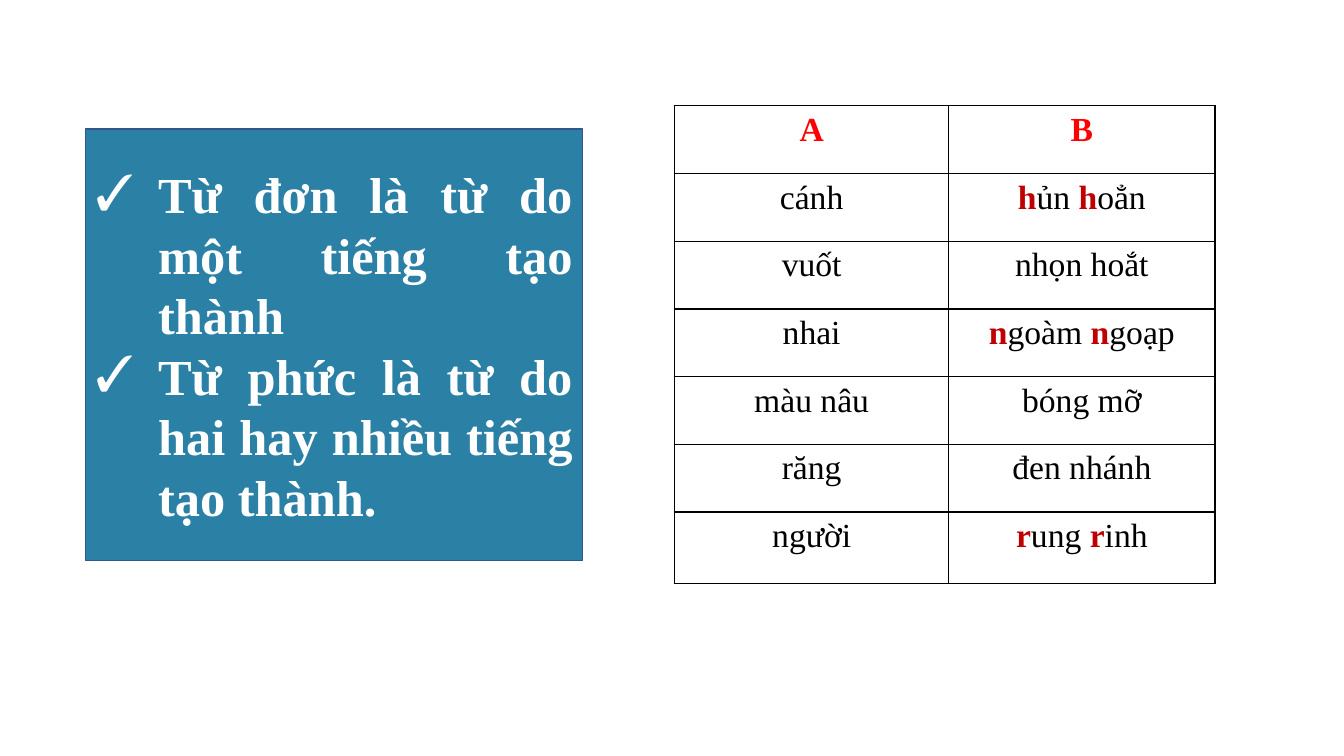
import pptx
import pptx.util
import pptx.dml.color
import pptx.enum.shapes
import pptx.enum.text
import pptx.oxml
import pptx.oxml.ns
from lxml import etree

Inches = pptx.util.Inches
Align = pptx.enum.text.PP_ALIGN
Anchor = pptx.enum.text.MSO_ANCHOR

WHITE = pptx.dml.color.RGBColor(0xFF, 0xFF, 0xFF)
BLACK = pptx.dml.color.RGBColor(0x00, 0x00, 0x00)
RED = pptx.dml.color.RGBColor(0xFF, 0x00, 0x00)
DARK_RED = pptx.dml.color.RGBColor(0xC0, 0x00, 0x00)
TEAL = pptx.dml.color.RGBColor(0x2B, 0x80, 0xA5)
NAVY = pptx.dml.color.RGBColor(0x32, 0x54, 0x91)
FONT = "Times New Roman"

RULES = [
    "Từ đơn là từ do một tiếng tạo thành",
    "Từ phức là từ do hai hay nhiều tiếng tạo thành.",
]
WORD_PAIRS = [
    ("A", "B"),
    ("cánh", "*h*ủn *h*oẳn"),
    ("vuốt", "nhọn hoắt"),
    ("nhai", "*n*goàm *n*goạp"),
    ("màu nâu", "bóng mỡ"),
    ("răng", "đen nhánh"),
    ("người", "*r*ung *r*inh"),
]
COLUMN_WIDTHS = [2.72, 2.64]
TABLE_HEIGHT = 4.74
LAST_ROW = 0.71
ROW_HEIGHTS = [(TABLE_HEIGHT - LAST_ROW) / 6] * 6 + [LAST_ROW]


def write(para, text, size, color, bold=False, accent=DARK_RED, align=Align.CENTER):
    para.alignment = align
    for index, piece in enumerate(text.split("*")):
        if piece:
            marked = index % 2 == 1
            span = para.add_run()
            span.text = piece
            span.font.name = FONT
            span.font.size = pptx.util.Pt(size)
            span.font.bold = bold or marked
            span.font.color.rgb = accent if marked else color


deck = pptx.Presentation()
deck.slide_width = Inches(13.33)
deck.slide_height = Inches(7.5)
page = deck.slides.add_slide(deck.slide_layouts[6])

box = page.shapes.add_shape(
    pptx.enum.shapes.MSO_SHAPE.RECTANGLE,
    Inches(0.85), Inches(1.28), Inches(4.93), Inches(4.28))
box.shadow.inherit = False
box.fill.solid()
box.fill.fore_color.rgb = TEAL
box.line.color.rgb = NAVY
box.line.width = pptx.util.Pt(1)
frame = box.text_frame
frame.word_wrap = True
frame.vertical_anchor = Anchor.MIDDLE
for index, rule in enumerate(RULES):
    para = frame.add_paragraph() if index else frame.paragraphs[0]
    write(para, rule, size=36, color=WHITE, bold=True, align=Align.JUSTIFY)
    properties = para._p.get_or_add_pPr()
    properties.set("marL", str(Inches(0.62)))
    properties.set("indent", str(-Inches(0.62)))
    bullet_font = etree.SubElement(properties, pptx.oxml.ns.qn("a:buFont"))
    bullet_font.set("typeface", FONT)
    bullet = etree.SubElement(properties, pptx.oxml.ns.qn("a:buChar"))
    bullet.set("char", "✓")

table = page.shapes.add_table(
    len(WORD_PAIRS), len(COLUMN_WIDTHS), Inches(6.69), Inches(1.05),
    Inches(sum(COLUMN_WIDTHS)), Inches(TABLE_HEIGHT)).table
table.first_row = False
table.horz_banding = False
for column, width in zip(table.columns, COLUMN_WIDTHS):
    column.width = Inches(width)
for row, height in zip(table.rows, ROW_HEIGHTS):
    row.height = Inches(height)

for row_index, pair in enumerate(WORD_PAIRS):
    header = row_index == 0
    for column_index, word in enumerate(pair):
        cell = table.cell(row_index, column_index)
        cell.margin_left = cell.margin_right = Inches(0.07)
        cell.margin_top = cell.margin_bottom = 0
        cell.vertical_anchor = Anchor.TOP
        para = cell.text_frame.paragraphs[0]
        para.line_spacing = 1.15
        write(para, word, size=24, color=RED if header else BLACK, bold=header)
        properties = cell._tc.get_or_add_tcPr()
        for side in ("lnL", "lnR", "lnT", "lnB"):
            properties.append(pptx.oxml.parse_xml(
                f'<a:{side} {pptx.oxml.ns.nsdecls("a")} w="{pptx.util.Pt(1)}">'
                f'<a:solidFill><a:srgbClr val="{BLACK}"/></a:solidFill></a:{side}>'))
        cell.fill.solid()
        cell.fill.fore_color.rgb = WHITE

deck.save("out.pptx")
